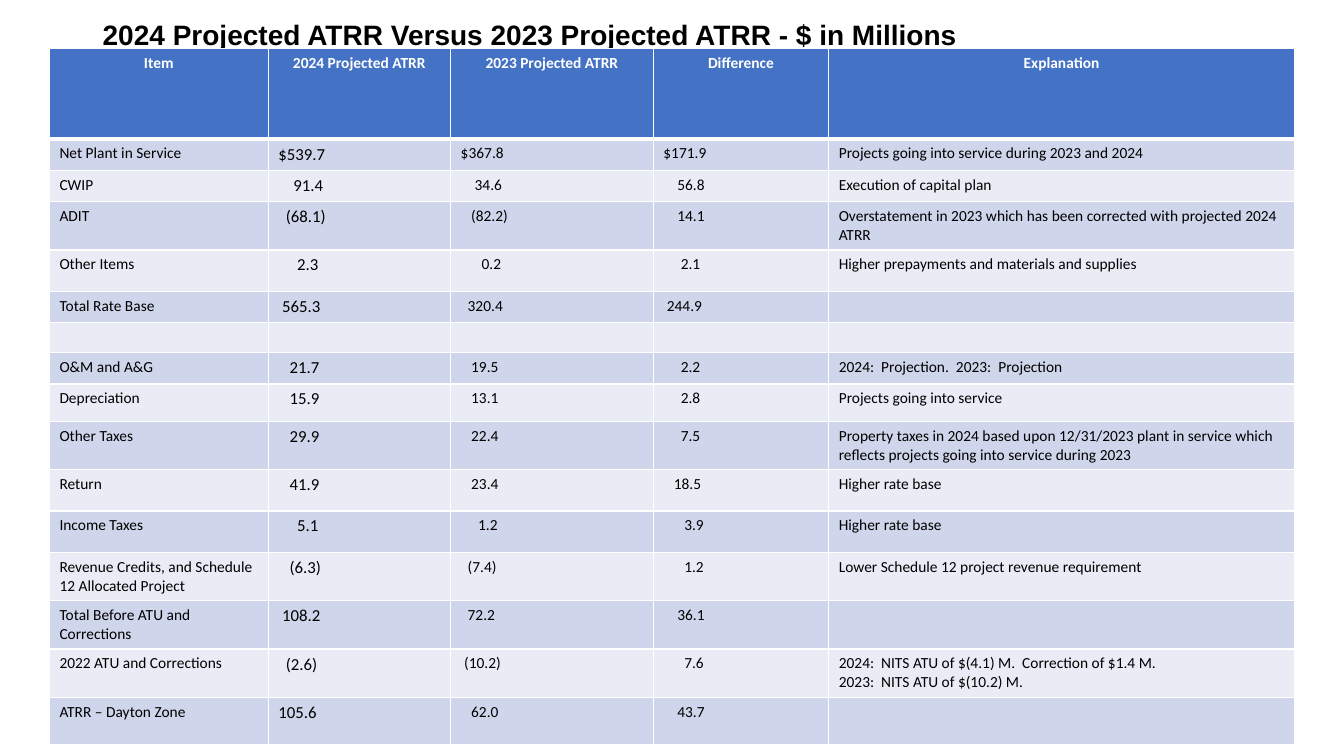
from lxml.etree import SubElement
from pptx import Presentation
from pptx.dml.color import RGBColor as RGB
from pptx.enum.text import MSO_ANCHOR as ANCHOR, PP_ALIGN as ALIGN
from pptx.oxml.ns import qn
from pptx.util import Inches, Pt

COLORS = {"white": "FFFFFF", "black": "000000", "header": "4472C4",
          "band_dark": "CFD5EA", "band_light": "E9EBF5"}
SPACE_EM = 0.226
CELL_MARGIN = 0.1

HEADERS = ["Item", "2024 Projected ATRR", "2023 Projected ATRR", "Difference", "Explanation"]
COL_WIDTHS = [2.17, 1.81, 2.01, 1.74, 4.62]
COL_SIZES = [11, 12, 11, 11, 11]
HEADER_HEIGHT = 0.9

ROWS = [
    (0.31, "Net Plant in Service", ("$539.7", "$367.8", "$171.9"), (0, 0, 0),
     "Projects going into service during 2023 and 2024"),
    (0.31, "CWIP", ("91.4", "34.6", "56.8"), (4, 4, 4), "Execution of capital plan"),
    (0.48, "ADIT", ("(68.1)", "(82.2)", "14.1"), (2, 3, 4),
     "Overstatement in 2023 which has been corrected with projected 2024 ATRR"),
    (0.41, "Other Items", ("2.3", "0.2", "2.1"), (5, 6, 5),
     "Higher prepayments and materials and supplies"),
    (0.31, "Total Rate Base", ("565.3", "320.4", "244.9"), (1, 2, 1), ""),
    (0.3, "", ("", "", ""), (0, 0, 0), ""),
    (0.31, "O&M and A&G", ("21.7", "19.5", "2.2"), (3, 3, 5),
     "2024:  Projection.  2023:  Projection"),
    (0.37, "Depreciation", ("15.9", "13.1", "2.8"), (3, 3, 5), "Projects going into service"),
    (0.48, "Other Taxes", ("29.9", "22.4", "7.5"), (3, 3, 5),
     "Property taxes in 2024 based upon 12/31/2023 plant in service which "
     "reflects projects going into service during 2023"),
    (0.41, "Return", ("41.9", "23.4", "18.5"), (3, 3, 3), "Higher rate base"),
    (0.41, "Income Taxes", ("5.1", "1.2", "3.9"), (5, 5, 6), "Higher rate base"),
    (0.48, "Revenue Credits, and Schedule 12 Allocated Project",
     ("(6.3)", "(7.4)", "1.2"), (3, 2, 6), "Lower Schedule 12 project revenue requirement"),
    (0.48, "Total Before ATU and Corrections", ("108.2", "72.2", "36.1"), (1, 2, 4), ""),
    (0.48, "2022 ATU and Corrections", ("(2.6)", "(10.2)", "7.6"), (2, 1, 6),
     "2024:  NITS ATU of $(4.1) M.  Correction of $1.4 M.\n2023:  NITS ATU of $(10.2) M."),
    (0.47, "ATRR – Dayton Zone", ("105.6", "62.0", "43.7"), (0, 3, 4), ""),
]


def write(tf, text, size=11, font="Calibri", color="black", bold=False,
          align=ALIGN.LEFT, spacing=None):
    for i, line in enumerate(text.split("\n")):
        p = tf.add_paragraph() if i else tf.paragraphs[0]
        p.alignment = align
        if spacing:
            p.line_spacing = spacing
        if not line:
            SubElement(p._p, qn("a:endParaRPr"), sz=str(size * 100))
            continue
        r = p.add_run()
        r.text = line
        r.font.size, r.font.name, r.font.bold = Pt(size), font, bold
        r.font.color.rgb = RGB.from_string(COLORS[color])


class AtrrSlide:
    def __init__(self, prs):
        self.colors = COLORS
        self.s = prs.slides.add_slide(prs.slide_layouts[6])

    def title(self, text, x, y, w, h):
        tf = self.s.shapes.add_textbox(Inches(x), Inches(y), Inches(w), Inches(h)).text_frame
        tf.word_wrap = True
        tf.vertical_anchor = ANCHOR.MIDDLE
        write(tf, text, size=20, font="Arial", bold=True, spacing=0.9)

    def borders(self, cell, **widths):
        tc_pr = cell._tc.get_or_add_tcPr()
        for side in "LRTB":
            ln = SubElement(tc_pr, qn(f"a:ln{side}"), w=str(Pt(widths.get(side, 1))))
            fill = SubElement(ln, qn("a:solidFill"))
            SubElement(fill, qn("a:srgbClr"), val=self.colors["white"])

    def cell(self, cell, text, fill, indent=0, edges=None, **fmt):
        self.borders(cell, **(edges or {}))
        cell.fill.solid()
        cell.fill.fore_color.rgb = RGB.from_string(self.colors[fill])
        cell.margin_left = Inches(CELL_MARGIN + indent)
        write(cell.text_frame, text, **fmt)

    def table(self, x, y):
        heights = [HEADER_HEIGHT] + [row[0] for row in ROWS]
        table = self.s.shapes.add_table(
            len(heights), len(COL_WIDTHS), Inches(x), Inches(y),
            Inches(sum(COL_WIDTHS)), Inches(sum(heights))).table
        table.horz_banding = False
        for col, width in zip(table.columns, COL_WIDTHS):
            col.width = Inches(width)
        for row, height in zip(table.rows, heights):
            row.height = Inches(height)
        for c, text in enumerate(HEADERS):
            self.cell(table.cell(0, c), text, "header", edges={"B": 3},
                      color="white", bold=True, align=ALIGN.CENTER)
        for r, (_, item, values, pads, note) in enumerate(ROWS, 1):
            fill = "band_dark" if r % 2 else "band_light"
            edges = {"T": 3} if r == 1 else None
            texts = (item, *values, note)
            for c, (text, pad, size) in enumerate(zip(texts, (0, *pads, 0), COL_SIZES)):
                self.cell(table.cell(r, c), text, fill, edges=edges, size=size,
                          indent=pad * SPACE_EM * size / 72)


def main():
    prs = Presentation()
    prs.slide_width, prs.slide_height = Inches(13.33), Inches(7.5)
    slide = AtrrSlide(prs)
    slide.title("2024 Projected ATRR Versus 2023 Projected ATRR - $ in Millions",
                0.92, 0.17, 11.5, 0.38)
    slide.table(0.49, 0.48)
    prs.save("out.pptx")


if __name__ == "__main__":
    main()
